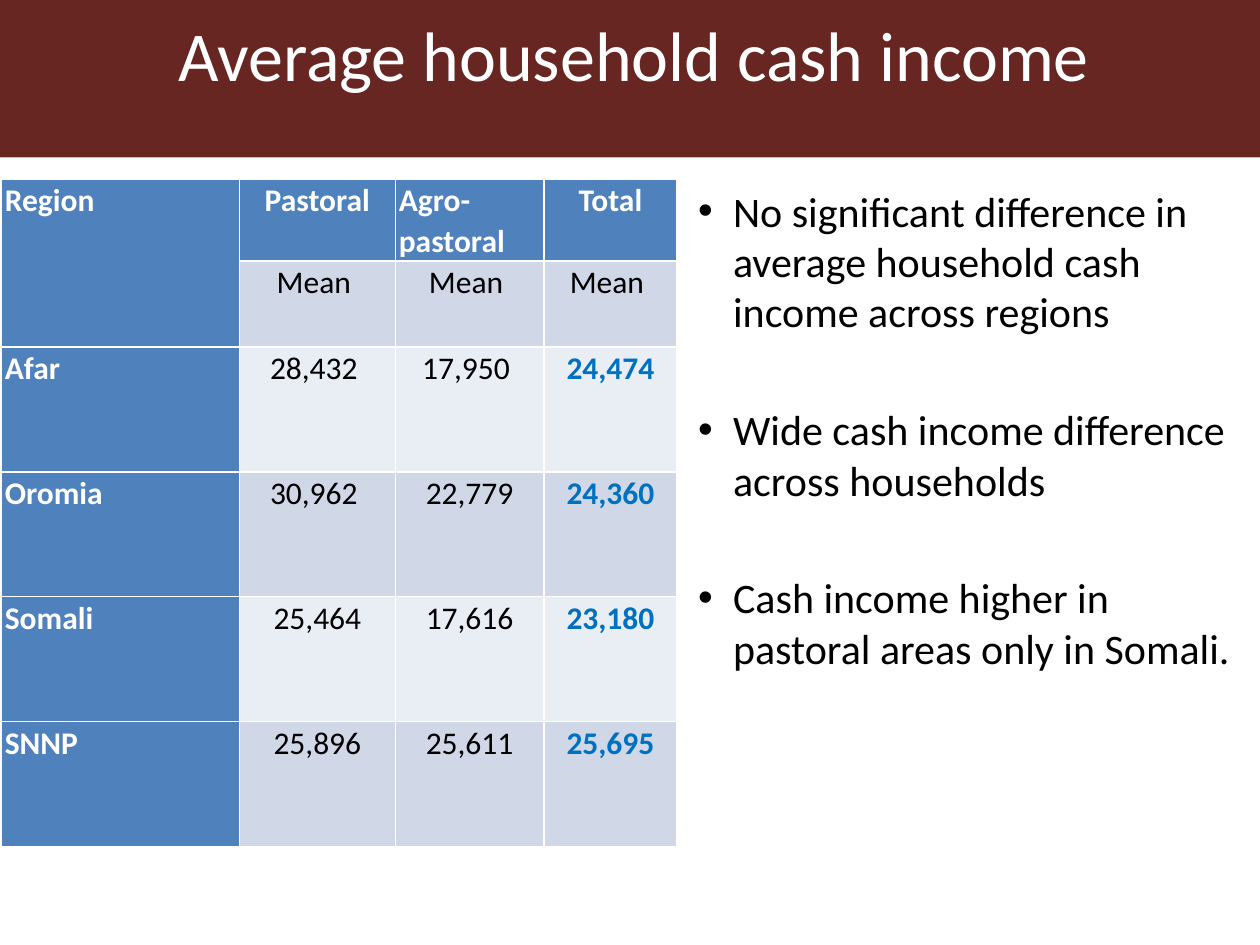
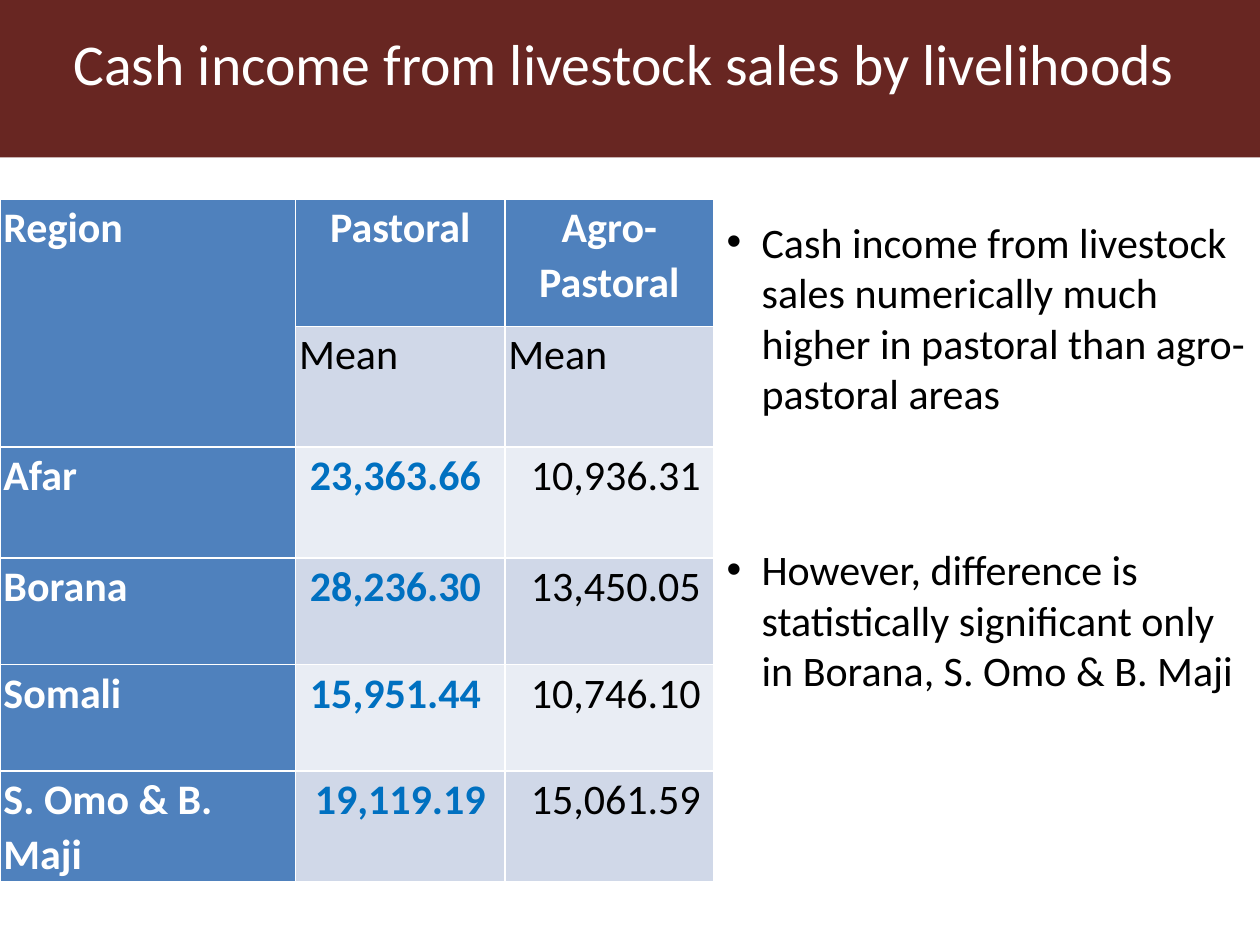
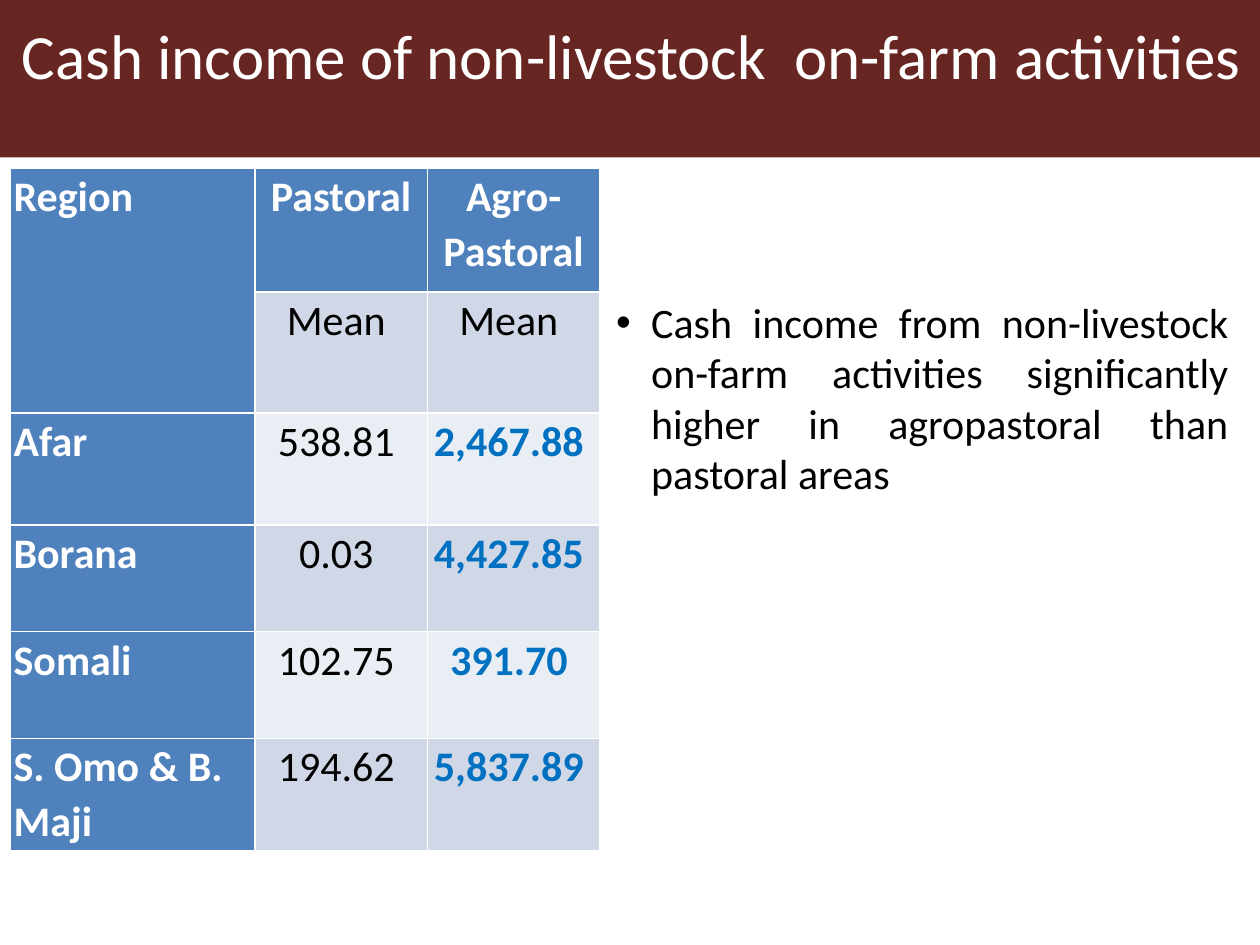
from dataclasses import dataclass

from pptx import Presentation
from pptx.dml.color import RGBColor
from pptx.enum.shapes import MSO_SHAPE
from pptx.enum.text import MSO_ANCHOR, MSO_AUTO_SIZE, PP_ALIGN
from pptx.util import Pt

ALIGN = {"l": PP_ALIGN.LEFT, "c": PP_ALIGN.CENTER, "r": PP_ALIGN.RIGHT, "j": PP_ALIGN.JUSTIFY}


@dataclass(frozen=True)
class Theme:
    font: str = "Calibri"
    band: RGBColor = RGBColor(0x68, 0x26, 0x22)
    header: RGBColor = RGBColor(0x4F, 0x81, 0xBD)
    dark_row: RGBColor = RGBColor(0xD0, 0xD8, 0xE8)
    light_row: RGBColor = RGBColor(0xE9, 0xED, 0xF4)
    white: RGBColor = RGBColor(0xFF, 0xFF, 0xFF)
    text: RGBColor = RGBColor(0, 0, 0)
    highlight: RGBColor = RGBColor(0x00, 0x70, 0xC0)
    body_size: int = 24
    table_size: int = 24
    compact_table_size: int = 18
    title_size: int = 40
    long_title_size: int = 33
    wide_title_size: int = 36


class Deck:
    def __init__(self, theme):
        self.theme = theme
        self.prs = Presentation()
        self.prs.slide_width, self.prs.slide_height = Pt(720), Pt(540)
        self.slide = None

    def add_slide(self):
        self.slide = self.prs.slides.add_slide(self.prs.slide_layouts[1])

    def master_band(self):
        """Draw the title band once and hand it to the slide master."""
        band = self.slide.shapes.add_shape(MSO_SHAPE.RECTANGLE, 0, 0, Pt(720), Pt(90))
        band.shadow.inherit = False
        band.fill.solid()
        band.fill.fore_color.rgb = self.theme.band
        band.line.fill.background()
        band._element.nvSpPr.cNvPr.set("id", "99")
        self.prs.slide_master.shapes[0]._element.addprevious(band._element)

    def place(self, shape, box):
        shape.left, shape.top, shape.width, shape.height = (Pt(v) for v in box)
        frame = shape.text_frame
        frame.auto_size = MSO_AUTO_SIZE.NONE
        frame.vertical_anchor = MSO_ANCHOR.TOP
        return frame

    def style(self, paragraph, size, color, bold=False, align="l"):
        paragraph.alignment = ALIGN[align]
        font = paragraph.font
        font.name, font.size, font.bold = self.theme.font, Pt(size), bold
        font.color.rgb = color

    def title(self, text, box, size):
        frame = self.place(self.slide.shapes.title, box)
        frame.text = text
        self.style(frame.paragraphs[0], size, self.theme.white, align="c")

    def bullets(self, points, box, gap=0, top_inset=3.6, align="l"):
        frame = self.place(self.slide.placeholders[1], box)
        frame.margin_top = Pt(top_inset)
        frame.text = "\n".join(points)
        for i, point in enumerate(frame.paragraphs):
            self.style(point, self.theme.body_size, self.theme.text, align=align)
            properties = point._p.get_or_add_pPr()
            properties.set("marL", str(Pt(20)))
            properties.set("indent", str(-Pt(20)))
            if i:
                point.space_before = Pt(gap)

    def income_table(self, rows, origin, widths, heights, size, highlight, aligns):
        """aligns: column alignments of the header, the unit row and the values."""
        left, top = origin
        table = self.slide.shapes.add_table(
            len(rows), len(widths), Pt(left), Pt(top), Pt(sum(widths)), Pt(sum(heights))).table
        table.first_col = True
        for column, width in zip(table.columns, widths):
            column.width = Pt(width)
        for row, height in zip(table.rows, heights):
            row.height = Pt(height)
        for r, texts in enumerate(rows):
            for c, text in enumerate(texts):
                self.income_cell(table.cell(r, c), text, r, c, size,
                                 c == highlight and r > 1, aligns[min(r, 2)][c])
        # The region heading covers the header and unit rows
        table.cell(0, 0).merge(table.cell(1, 0))

    def income_cell(self, cell, text, r, c, size, highlighted, align):
        theme = self.theme
        heading = r == 0 or c == 0
        cell.fill.solid()
        cell.fill.fore_color.rgb = (
            theme.header if heading else theme.dark_row if r % 2 else theme.light_row)
        cell.margin_left = cell.margin_right = Pt(2)
        cell.margin_top = cell.margin_bottom = 0
        cell.text = text
        color = theme.white if heading else theme.highlight if highlighted else theme.text
        paragraph = cell.text_frame.paragraphs[0]
        self.style(paragraph, size, color, heading or highlighted, align)
        paragraph.line_spacing = 1.07


def main():
    theme = Theme()
    deck = Deck(theme)

    # Household cash income
    deck.add_slide()
    deck.master_band()
    deck.title("Average household cash income", (4.3, 2.9, 715.7, 54), theme.title_size)
    deck.income_table(
        [("Region", "Pastoral", "Agro-pastoral", "Total"),
         ("", "Mean ", "Mean ", "Mean "),
         ("Afar", "28,432 ", "17,950 ", "24,474"),
         ("Oromia", "30,962 ", "22,779", "24,360"),
         ("Somali", "25,464", "17,616", "23,180"),
         ("SNNP", "25,896", "25,611", "25,695")],
        (0.8, 102.2), (136, 89.2, 84.8, 76.2), (47, 49) + (71.4,) * 4,
        theme.compact_table_size, highlight=3, aligns=("lclc", "lccc", "lccc"))
    deck.bullets(
        ["No significant difference in average household cash income across regions",
         "Wide cash income difference across households",
         "Cash income higher in pastoral areas only in Somali."],
        (391.7, 102.2, 327.6, 401.8), gap=38.5)

    # Livestock sales
    deck.add_slide()
    deck.title("Cash income from livestock sales by livelihoods ",
               (12.2, 12.2, 696.2, 61.2), theme.long_title_size)
    deck.income_table(
        [("Region", "Pastoral", "Agro-Pastoral"),
         ("", "Mean", "Mean"),
         ("Afar", "23,363.66 ", "10,936.31 "),
         ("Borana", "28,236.30 ", "13,450.05 "),
         ("Somali", "15,951.44 ", "10,746.10 "),
         ("S. Omo & B. Maji", "19,119.19", "15,061.59 ")],
        (0, 114), (169, 119.5, 119.5), (72.5, 69, 63.5, 60.8, 60.8, 63.5),
        theme.table_size, highlight=1, aligns=("lcc", "lll", "lcr"))
    deck.bullets(
        ["Cash income from livestock sales numerically much higher in pastoral than "
         "agro-pastoral areas",
         "However, difference is statistically significant only in Borana, S. Omo & B. Maji"],
        (408, 120, 312, 384), gap=72)

    # Non-livestock on-farm activities
    deck.add_slide()
    deck.title("Cash income of non-livestock  on-farm activities",
               (2.9, 5.8, 715.7, 36.7), theme.wide_title_size)
    deck.income_table(
        [("Region", "Pastoral", "Agro-Pastoral"),
         ("", "Mean ", "Mean "),
         ("Afar", "538.81 ", "2,467.88 "),
         ("Borana", "0.03 ", "4,427.85 "),
         ("Somali", "102.75 ", "391.70 "),
         ("S. Omo & B. Maji", "194.62 ", "5,837.89 ")],
        (5.8, 96), (139.8, 98.6, 98.6), (71, 69, 64, 61, 61, 64),
        theme.table_size, highlight=2, aligns=("lcc", "lcc", "lcc"))
    deck.bullets(
        ["Cash income from non-livestock on-farm activities significantly higher in "
         "agropastoral than pastoral areas"],
        (344.9, 97.9, 364.3, 388.1), top_inset=71.5, align="j")

    deck.prs.save("out.pptx")


if __name__ == "__main__":
    main()
